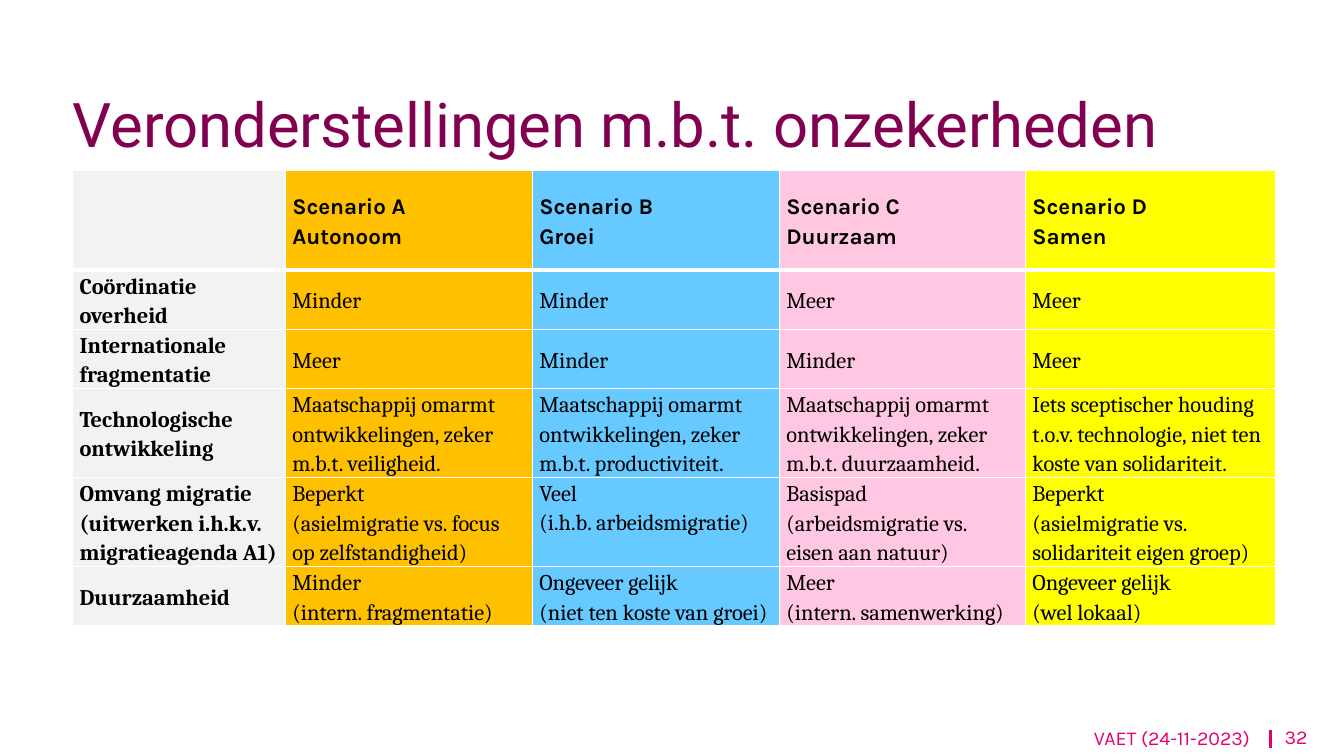
from lxml.etree import SubElement as Sub
from pptx import Presentation
from pptx.dml.color import RGBColor as RGB
from pptx.enum.shapes import MSO_CONNECTOR as Link
from pptx.enum.text import MSO_ANCHOR as Anchor, MSO_AUTO_SIZE as Fit, PP_ALIGN as Align
from pptx.oxml.ns import qn
from pptx.util import Inches, Pt

PLUM = RGB(0x82, 0x00, 0x50)
PINK = RGB(0xE6, 0x00, 0x6E)
BLACK = RGB(0, 0, 0)
GREY = RGB(0xF2, 0xF2, 0xF2)
GOLD = RGB(0xFF, 0xC0, 0x00)
BLUE = RGB(0x66, 0xC9, 0xFF)
ROSE = RGB(0xFF, 0xC7, 0xE2)
YELLOW = RGB(0xFF, 0xFF, 0x00)
WHITE = RGB(0xFF, 0xFF, 0xFF)

FILLS = [GREY, GOLD, BLUE, ROSE, YELLOW]
COLS = [2.11, 2.45, 2.45, 2.44, 2.48]
HEAD, ROW = 0.99, 0.49
TECH, MOVE = 3, 4
ROWS = [
    ["", "Scenario A\nAutonoom", "Scenario B\nGroei",
     "Scenario C\nDuurzaam", "Scenario D\nSamen"],
    ["Coördinatie overheid", "Minder", "Minder", "Meer", "Meer"],
    ["Internationale fragmentatie", "Meer", "Minder", "Minder", "Meer"],
    ["Technologische ontwikkeling",
     "Maatschappij omarmt ontwikkelingen, zeker m.b.t. veiligheid.",
     "Maatschappij omarmt ontwikkelingen, zeker m.b.t. productiviteit.",
     "Maatschappij omarmt ontwikkelingen, zeker m.b.t. duurzaamheid.",
     "Iets sceptischer houding t.o.v. technologie, niet ten koste van solidariteit."],
    ["Omvang migratie\n(uitwerken i.h.k.v. migratieagenda A1)",
     "Beperkt\n(asielmigratie vs. focus op zelfstandigheid)",
     "Veel\n(i.h.b. arbeidsmigratie)",
     "Basispad\n(arbeidsmigratie vs. eisen aan natuur)",
     "Beperkt\n(asielmigratie vs. solidariteit eigen groep)"],
    ["Duurzaamheid", "Minder\n(intern. fragmentatie)",
     "Ongeveer gelijk\n(niet ten koste van groei)",
     "Meer\n(intern. samenwerking)", "Ongeveer gelijk\n(wel lokaal)"],
]


def apply(item, style):
    for key, value in style.items():
        setattr(item, key, value)


def write(frame, text, size, face, color, bold=False, align=Align.LEFT, lead=1.0):
    frame.text = text
    for para in frame.paragraphs:
        apply(para, dict(alignment=align, line_spacing=lead, space_before=Pt(0)))
        apply(para.font, dict(size=Pt(size), name=face, bold=bold))
        para.font.color.rgb = color


def pad(left=0, top=0, right=0, bottom=0):
    return dict(margin_left=Inches(left), margin_top=Inches(top),
                margin_right=Inches(right), margin_bottom=Inches(bottom))


def edge(cell, sides):
    props = cell._tc.get_or_add_tcPr()
    for side, width in sides.items():
        line = Sub(props, qn(f"a:ln{side}"), w=str(Pt(width)))
        fill = Sub(line, qn("a:solidFill"))
        Sub(fill, qn("a:srgbClr"), val=str(WHITE))


def add_title(slide, left, top, width, height):
    title = slide.shapes.title
    apply(title, dict(left=Inches(left), top=Inches(top),
                      width=Inches(width), height=Inches(height)))
    frame = title.text_frame
    apply(frame, dict(word_wrap=True, auto_size=Fit.NONE,
                      vertical_anchor=Anchor.BOTTOM, **pad(right=0.2)))
    write(frame, "Veronderstellingen m.b.t. onzekerheden", 44, "Roboto", PLUM, lead=1.2)


def add_grid(slide, left, top):
    box = [Inches(n) for n in (left, top, sum(COLS), HEAD + ROW * (len(ROWS) - 1))]
    table = slide.shapes.add_table(len(ROWS), len(COLS), *box).table
    for col, width in zip(table.columns, COLS):
        col.width = Inches(width)
    for r, texts in enumerate(ROWS):
        table.rows[r].height = Inches(ROW if r else HEAD)
        for c, text in enumerate(texts):
            cell = table.cell(r, c)
            edge(cell, dict(L=1, R=1, T=3 if r == 1 else 1, B=1 if r else 3))
            cell.fill.solid()
            cell.fill.fore_color.rgb = FILLS[c]
            lift = 0.3 if (r, c) == (MOVE, 2) else 0
            high = r == TECH and c > 0
            apply(cell, dict(vertical_anchor=Anchor.TOP if high else Anchor.MIDDLE,
                             **pad(left=0.07, right=0.07, bottom=lift)))
            write(cell.text_frame, text, 16, "Cambria" if r else "Karla", BLACK,
                  bold=r == 0 or c == 0, lead=1.15)


def add_label(slide, text, *box):
    frame = slide.shapes.add_textbox(*[Inches(n) for n in box]).text_frame
    apply(frame, dict(word_wrap=True, vertical_anchor=Anchor.MIDDLE, **pad()))
    write(frame, text, 14, "Karla", PINK, align=Align.RIGHT)


def add_footer(slide, left, top, width, height):
    page = 0.56
    end = left + width
    bar = end - 0.37
    ends = [Inches(n) for n in (bar, top + 0.11, bar, top + 0.29)]
    rule = slide.shapes.add_connector(Link.STRAIGHT, *ends)
    rule.line.color.rgb = PINK
    rule.line.width = Pt(1.75)
    Sub(rule._element.spPr, qn("a:effectLst"))
    add_label(slide, "VAET (24-11-2023)", left, top + 0.01, width - page - 0.01, height)
    add_label(slide, "32", end - page, top, page, height)


def main():
    deck = Presentation()
    apply(deck, dict(slide_width=Inches(13.33), slide_height=Inches(7.5)))
    slide = deck.slides.add_slide(deck.slide_layouts[5])
    add_title(slide, 0.72, 0.8, 11.89, 0.79)
    add_grid(slide, 0.72, 1.69)
    add_footer(slide, 6.31, 7.13, 6.66, 0.36)
    deck.save("out.pptx")


if __name__ == "__main__":
    main()
